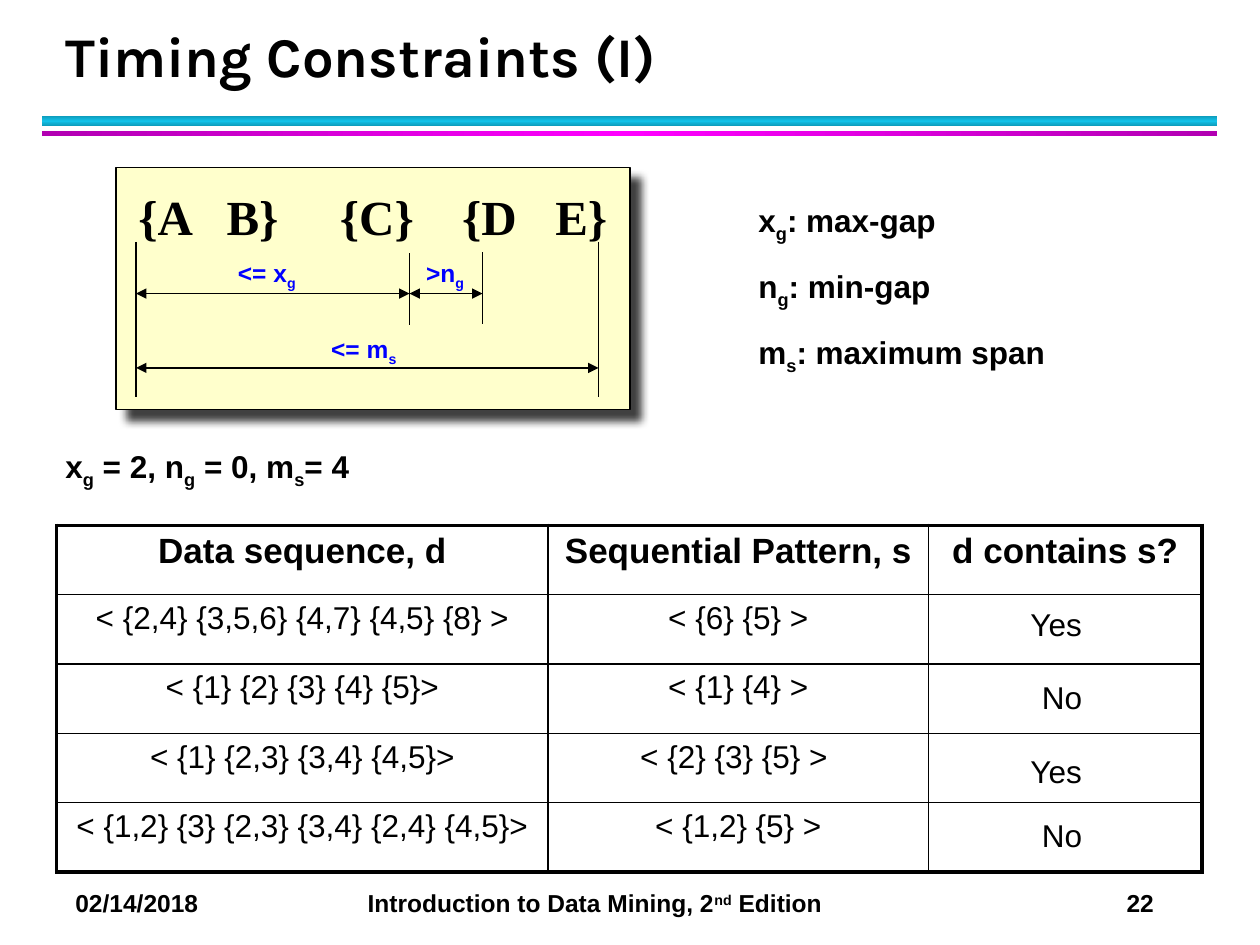
"""Builds the Timing Constraints slide with a gap diagram and a table of examples."""
from copy import deepcopy
from pptx import Presentation
from pptx.dml.color import RGBColor
from pptx.enum.shapes import MSO_CONNECTOR, MSO_SHAPE
from pptx.enum.text import MSO_ANCHOR, PP_ALIGN
from pptx.oxml.ns import qn
from pptx.oxml.xmlchemy import OxmlElement
from pptx.util import Inches, Pt

RECT, STRAIGHT = MSO_SHAPE.RECTANGLE, MSO_CONNECTOR.STRAIGHT
CENTER, BOTTOM = PP_ALIGN.CENTER, MSO_ANCHOR.BOTTOM
BLACK, BLUE = RGBColor(0, 0, 0), RGBColor(0, 0, 255)
CREAM = RGBColor(255, 255, 204)
TEAL, CYAN = RGBColor(0x0E, 0x9B, 0xBA), RGBColor(0x12, 0xC2, 0xE9)
PURPLE, MAGENTA = RGBColor(0xB2, 0, 0xB2), RGBColor(255, 0, 255)
SUB, SUPER = -25000, 30000
THIN, THICK = 1, 2.25

TITLE = "Timing Constraints (I)"
FOOTER = "02/14/2018\tIntroduction to Data Mining, 2|nd| Edition\t22"
SEQUENCE = "{A\tB}\t{C}\t{D\tE}"
LEGEND = ["x|g|: max-gap", "n|g|: min-gap", "m|s|: maximum span"]
SETTINGS = "x|g| = 2, n|g| = 0, m|s|= 4"
RULES = [((0.33, 0.92, 9.33, 0.08), TEAL, CYAN, 90),
         ((0.33, 1.04, 9.33, 0.04), PURPLE, MAGENTA, 0)]
LABELS = [("<= m|s|", (2.53, 2.6, 0.72, 0.33)),
          ("<= x|g|", (1.79, 2, 0.66, 0.33)),
          (" >n|g|", (3.23, 2, 0.56, 0.33))]
START, C_END, D_START, E_END = 1.08, 3.25, 3.83, 4.75
SPANS = [(START, E_END, 2.92), (START, C_END, 2.33), (C_END, D_START, 2.33)]
MARKS = [(START, 1.92, 3.15), (C_END, 2.01, 2.58),
         (E_END, 1.92, 3.15), (D_START, 2, 2.57)]
TABLE_BOX = (0.45, 4.17, 9.1, 2.75)
COLUMNS = [3.9, 3.02, 2.17]
ROWS = [("Data sequence, d", "Sequential Pattern, s", "d contains s?"),
        ("< {2,4} {3,5,6} {4,7} {4,5} {8} >", "< {6} {5} >", ""),
        ("< {1} {2} {3} {4} {5}>", "< {1} {4} >", ""),
        ("< {1} {2,3} {3,4} {4,5}>", "< {2} {3} {5} > ", ""),
        ("< {1,2} {3} {2,3} {3,4} {2,4} {4,5}>", "< {1,2} {5} >", "")]
ANSWERS = [("Yes", (8.08, 4.75, 0.83, 0.4)), ("No", (8.17, 5.33, 0.58, 0.4)),
           ("Yes", (8.08, 5.92, 0.83, 0.4)), ("No", (8.17, 6.43, 0.58, 0.4))]


def add(parent, tag, **attrs):
    el = OxmlElement(tag)
    for name, value in attrs.items():
        el.set(name, str(value))
    parent.append(el)
    return el


def write(tf, *lines, size=18, font="Arial", color=BLACK, bold=True, shift=SUB,
          align=None, before=0, after=0, spacing=None, tabs=()):
    """Writes one paragraph per line; parts between bars are raised or lowered."""
    for i, line in enumerate(lines):
        p = tf.add_paragraph() if i else tf.paragraphs[0]
        p.alignment, p.line_spacing = align, spacing
        p.space_before, p.space_after = Pt(before), Pt(after)
        if tabs:
            stops = add(p._p.get_or_add_pPr(), "a:tabLst")
            for pos, side in tabs:
                add(stops, "a:tab", pos=Inches(pos), algn=side)
        for j, part in enumerate(line.split("|")):
            if not part:
                continue
            r = p.add_run()
            r.text = part
            r.font.size, r.font.name, r.font.bold = Pt(size), font, bold
            r.font.color.rgb = color
            if j % 2:
                r._r.get_or_add_rPr().set("baseline", str(shift))


def text(s, box, *lines, wrap=True, fill=None, anchor=None, **fmt):
    sp = s.shapes.add_textbox(*map(Inches, box))
    if fill is not None:
        sp.fill.solid()
        sp.fill.fore_color.rgb = fill
    tf = sp.text_frame
    tf.word_wrap = wrap
    tf.vertical_anchor = anchor
    write(tf, *lines, **fmt)


def rect(s, box):
    sp = s.shapes.add_shape(RECT, *map(Inches, box))
    sp.shadow.inherit = False
    return sp


def rule(s, box, edge, middle, angle):
    sp = rect(s, box)
    sp.line.fill.background()
    sp.fill.gradient()
    sp.fill.gradient_angle = angle
    first, second = sp.fill.gradient_stops
    first.color.rgb, first.position = edge, 0
    second.color.rgb, second.position = middle, 0.5
    stops = sp._element.spPr.find(".//" + qn("a:gsLst"))
    last = deepcopy(stops[0])
    last.set("pos", "100000")
    stops.append(last)


def panel(s, box):
    sp = rect(s, box)
    sp.fill.solid()
    sp.fill.fore_color.rgb = CREAM
    sp.line.color.rgb, sp.line.width = BLACK, Pt(0.75)
    shadow = add(sp._element.spPr.find(qn("a:effectLst")), "a:outerShdw",
                 blurRad=Pt(5), dist=Pt(8.5), dir=45 * 60000, algn="ctr", rotWithShape=0)
    add(add(shadow, "a:srgbClr", val=BLACK), "a:alpha", val=75000)


def line(s, x1, y1, x2, y2, arrows=False):
    c = s.shapes.add_connector(STRAIGHT, *map(Inches, (x1, y1, x2, y2)))
    c.line.color.rgb, c.line.width = BLACK, Pt(0.75)
    if arrows:
        ln = c.line._get_or_add_ln()
        add(ln, "a:headEnd", type="triangle")
        add(ln, "a:tailEnd", type="triangle")
    add(c._element.spPr, "a:effectLst")


def borders(cell, **widths):
    tc_pr = cell._tc.get_or_add_tcPr()
    for i, (side, width) in enumerate(widths.items()):
        ln = OxmlElement("a:ln" + side)
        ln.set("w", str(Pt(width)))
        add(add(ln, "a:solidFill"), "a:srgbClr", val=BLACK)
        tc_pr.insert(i, ln)


def table(s):
    t = s.shapes.add_table(len(ROWS), len(COLUMNS), *map(Inches, TABLE_BOX)).table
    t.first_row = t.horz_banding = False
    last_row, last_col = len(ROWS) - 1, len(COLUMNS) - 1
    for col, width in zip(t.columns, COLUMNS):
        col.width = Inches(width)
    for i, row in enumerate(ROWS):
        for j, value in enumerate(row):
            cell = t.cell(i, j)
            cell.fill.background()
            borders(cell, L=THIN if j else THICK, R=THICK if j == last_col else THIN,
                    T=THIN if i else THICK, B=THICK if i == last_row else THIN)
            write(cell.text_frame, value, size=18 if i else 20, bold=i == 0,
                  align=CENTER, before=2, after=4)


def main():
    prs = Presentation()
    prs.slide_width, prs.slide_height = Inches(10), Inches(7.5)
    s = prs.slides.add_slide(prs.slide_layouts[6])
    for args in RULES:
        rule(s, *args)
    text(s, (0.5, 7, 9.33, 0.34), FOOTER, size=14, shift=SUPER,
         tabs=[(2.32, "l"), (8.56, "r")])
    text(s, (0.42, 0.17, 9.06, 0.58), TITLE, size=32, font="Karla",
         anchor=BOTTOM, spacing=Pt(36))
    panel(s, (0.92, 1.33, 4.08, 1.92))
    text(s, (1, 1.43, 3.94, 0.57), SEQUENCE, size=28, font="Times New Roman", fill=CREAM,
         tabs=[(x, "l") for x in (0.7, 1.6, 2.57, 3.31)])
    for label, box in LABELS:
        text(s, box, label, size=14, color=BLUE, fill=CREAM, wrap=False)
    for x1, x2, y in SPANS:
        line(s, x1, y, x2, y, arrows=True)
    for x, top, bottom in MARKS:
        line(s, x, top, x, bottom)
    text(s, (5.92, 1.55, 3.42, 1.36), *LEGEND, before=2, after=11)
    table(s)
    text(s, (0.42, 3.5, 8.58, 0.4), SETTINGS, before=2)
    for answer, box in ANSWERS:
        text(s, box, answer, bold=False)
    prs.save("out.pptx")


if __name__ == "__main__":
    main()
